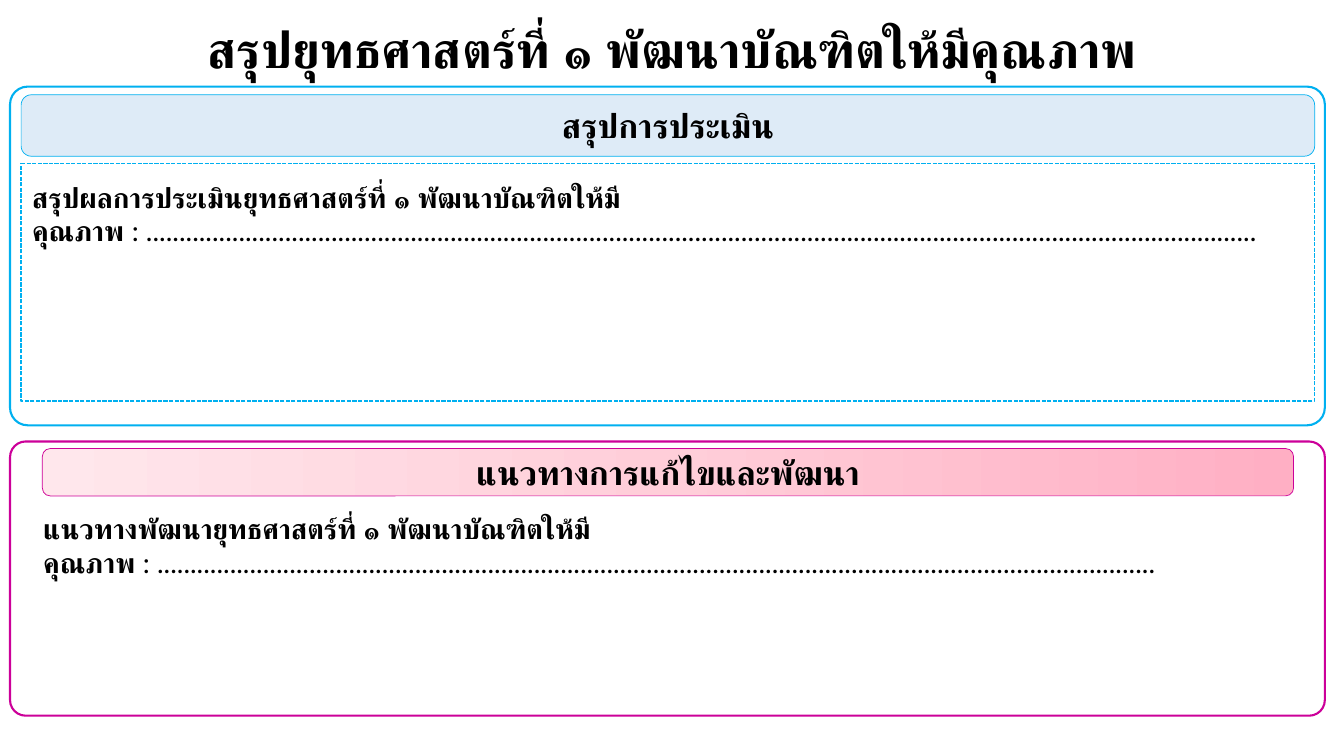
from copy import deepcopy
from dataclasses import dataclass

from pptx import Presentation
from pptx.dml.color import RGBColor
from pptx.enum.dml import MSO_LINE
from pptx.enum.shapes import MSO_SHAPE
from pptx.enum.text import MSO_ANCHOR, MSO_AUTO_SIZE, PP_ALIGN
from pptx.shapes.autoshape import Shape
from pptx.shapes.group import GroupShape
from pptx.slide import Slide
from pptx.text.text import Font
from pptx.util import Inches, Pt

ROUNDED = MSO_SHAPE.ROUNDED_RECTANGLE
DASHED = MSO_LINE.SQUARE_DOT
CENTER = PP_ALIGN.CENTER
MIDDLE = MSO_ANCHOR.MIDDLE
GROW = MSO_AUTO_SIZE.SHAPE_TO_FIT_TEXT

BLACK = RGBColor(0x00, 0x00, 0x00)
CYAN = RGBColor(0x00, 0xB0, 0xF0)
MAGENTA = RGBColor(0xCC, 0x00, 0x99)
PALE_BLUE = RGBColor(0xDE, 0xEB, 0xF7)
PINK = RGBColor(0xFF, 0xAF, 0xC4)
LIGHT_PINK = RGBColor(0xFF, 0xCE, 0xD9)
PALE_PINK = RGBColor(0xFF, 0xE7, 0xEC)

FONT_NAME = "Lato"
Box = tuple[float, float, float, float]


@dataclass(frozen=True)
class Panel:
    frame: Box
    corner: float
    color: RGBColor
    header: Box
    header_colors: tuple[RGBColor, ...]
    heading: str
    note: Box
    label: str
    blank: str
    dashed_frame: Box | None = None


PANELS = (
    Panel(
        frame=(0.1, 0.86, 13.04, 3.36),
        corner=0.052,
        color=CYAN,
        header=(0.21, 0.94, 12.83, 0.61),
        header_colors=(PALE_BLUE,),
        heading="สรุปการประเมิน",
        note=(0.22, 1.74, 12.61, 0.77),
        label="สรุปผลการประเมินยุทธศาสตร์ที่ ๑ พัฒนาบัณฑิตให้มีคุณภาพ ",
        blank=": ........................................................................................................................................................................",
        dashed_frame=(0.21, 1.62, 12.83, 2.36),
    ),
    Panel(
        frame=(0.1, 4.38, 13.04, 2.72),
        corner=0.057,
        color=MAGENTA,
        header=(0.42, 4.45, 12.41, 0.47),
        header_colors=(PINK, LIGHT_PINK, PALE_PINK),
        heading="แนวทางการแก้ไขและพัฒนา",
        note=(0.33, 5.03, 12.61, 0.77),
        label="แนวทางพัฒนายุทธศาสตร์ที่ ๑ พัฒนาบัณฑิตให้มีคุณภาพ ",
        blank=": .......................................................................................................................................................",
    ),
)


def set_font(font: Font, size: float, bold: bool) -> None:
    font.name = FONT_NAME
    font.size = Pt(size)
    font.bold = bold
    font.color.rgb = BLACK


def set_insets(shape: Shape, horizontal: float, vertical: float) -> None:
    frame = shape.text_frame
    frame.margin_left = frame.margin_right = Inches(horizontal)
    frame.margin_top = frame.margin_bottom = Inches(vertical)


def write_centered(shape: Shape, text: str, size: float) -> None:
    paragraph = shape.text_frame.paragraphs[0]
    paragraph.text = text
    paragraph.alignment = CENTER
    set_font(paragraph.font, size, True)


def add_rounded(group: GroupShape, box: Box, color: RGBColor, width: float,
                corner: float | None = None) -> Shape:
    shape = group.shapes.add_shape(ROUNDED, *map(Inches, box))
    shape.shadow.inherit = False
    shape.fill.background()
    shape.line.color.rgb = color
    shape.line.width = Pt(width)
    if corner is not None:
        shape.adjustments[0] = corner
    return shape


def fill_header(shape: Shape, colors: tuple[RGBColor, ...]) -> None:
    """Fill with one solid colour, or with a gradient from right to left."""
    if len(colors) == 1:
        shape.fill.solid()
        shape.fill.fore_color.rgb = colors[0]
        return
    shape.fill.gradient()
    shape.fill.gradient_angle = 180
    stop_list = shape.fill._fill._gradFill.gsLst
    while len(stop_list) < len(colors):
        stop_list.append(deepcopy(stop_list[0]))
    for index, (stop, color) in enumerate(zip(shape.fill.gradient_stops, colors)):
        stop.position = index / (len(colors) - 1)
        stop.color.rgb = color


def add_text_box(slide: Slide, box: Box) -> Shape:
    shape = slide.shapes.add_textbox(*map(Inches, box))
    shape.text_frame.word_wrap = True
    shape.text_frame.auto_size = GROW
    return shape


def add_panel(slide: Slide, panel: Panel) -> None:
    group = slide.shapes.add_group_shape()
    add_rounded(group, panel.frame, panel.color, 1.5, panel.corner)
    header = add_rounded(group, panel.header, panel.color, 0.5)
    fill_header(header, panel.header_colors)
    header.text_frame.vertical_anchor = MIDDLE
    set_insets(header, 0.04, 0.01)
    write_centered(header, panel.heading, 24)
    if panel.dashed_frame:
        dashed = add_rounded(group, panel.dashed_frame, panel.color, 1, 0)
        dashed.line.dash_style = DASHED


def add_note(slide: Slide, panel: Panel) -> None:
    paragraph = add_text_box(slide, panel.note).text_frame.paragraphs[0]
    for text, bold in ((panel.label, True), (panel.blank, False)):
        run = paragraph.add_run()
        run.text = text
        set_font(run.font, 20, bold)


def main() -> None:
    presentation = Presentation()
    presentation.slide_width = Inches(13.33)
    presentation.slide_height = Inches(7.5)
    slide = presentation.slides.add_slide(presentation.slide_layouts[6])

    title = add_text_box(slide, (0, 0.13, 13.33, 0.71))
    set_insets(title, 0.02, 0.05)
    write_centered(title, "สรุปยุทธศาสตร์ที่ ๑ พัฒนาบัณฑิตให้มีคุณภาพ", 36)
    for panel in PANELS:
        add_panel(slide, panel)
    for panel in PANELS:
        add_note(slide, panel)

    presentation.save("out.pptx")


if __name__ == "__main__":
    main()
